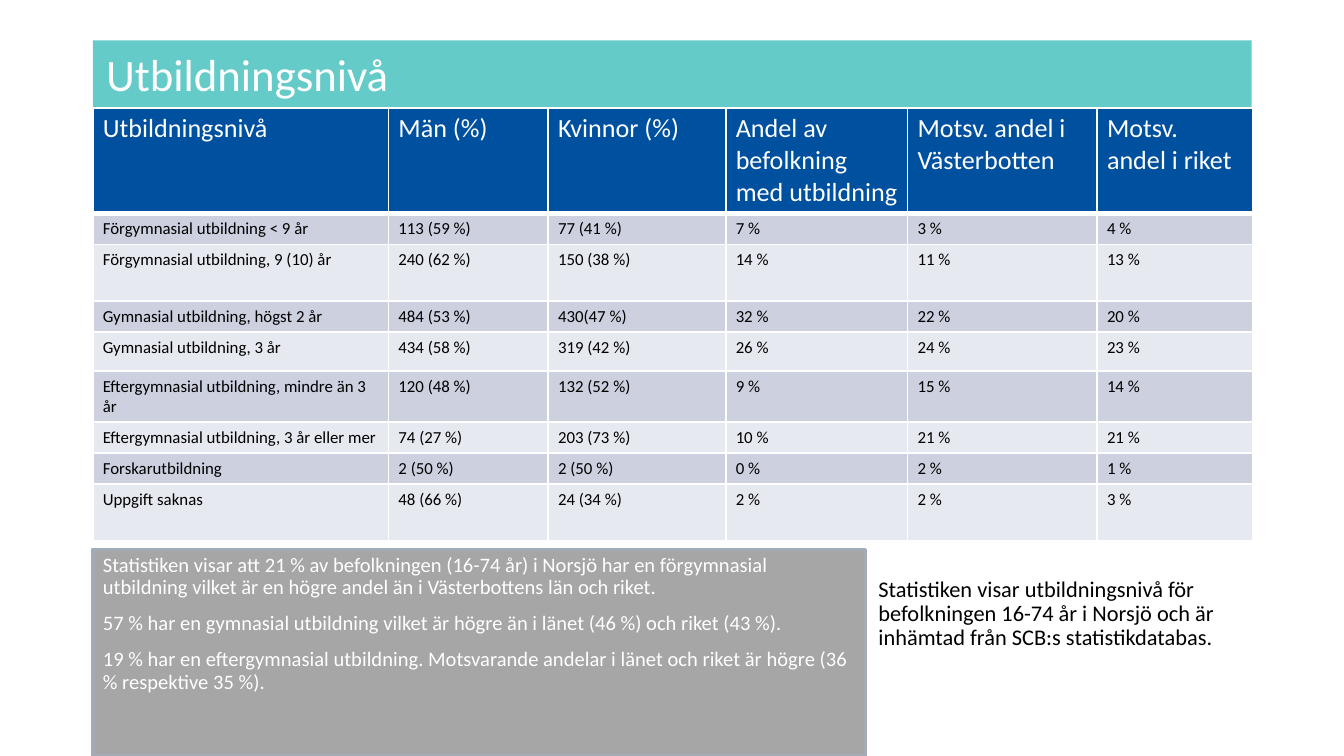
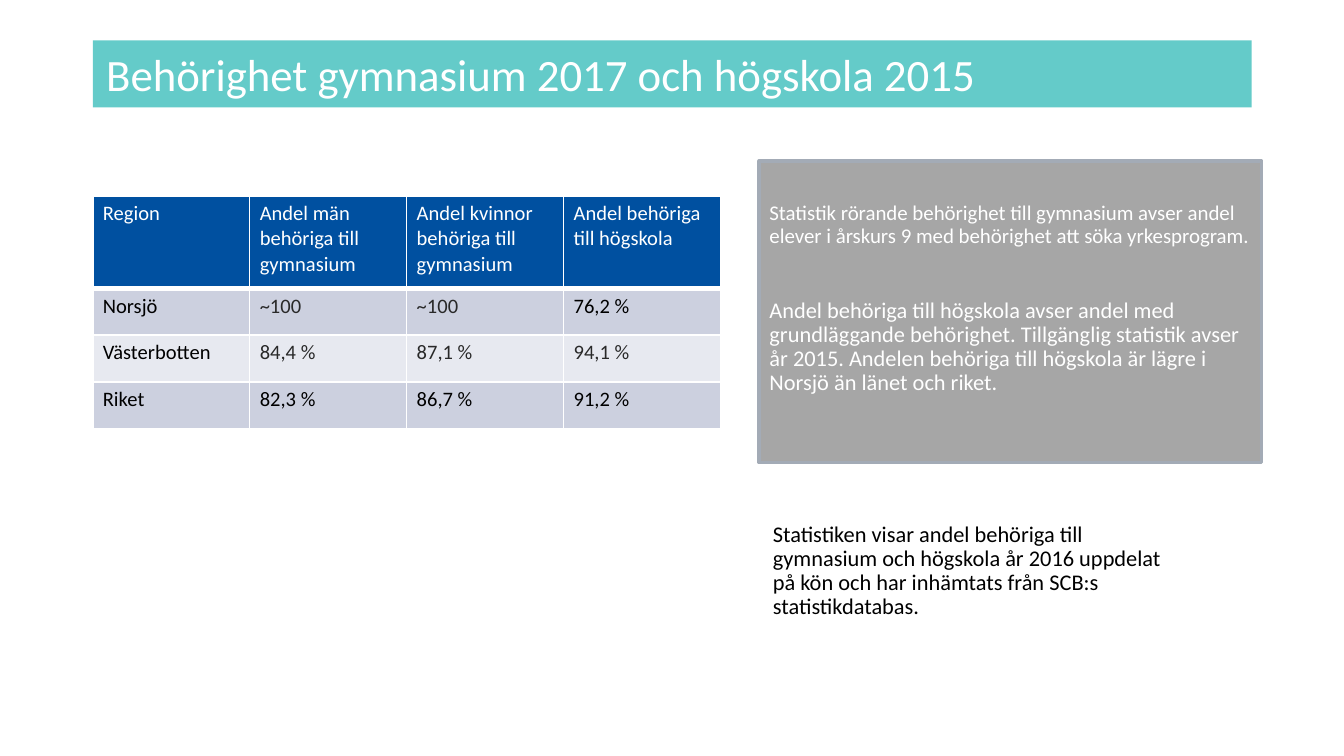
import pptx
import pptx.dml.color
import pptx.enum.shapes
import pptx.enum.text
import pptx.oxml
import pptx.oxml.ns
import pptx.util
from lxml import etree

Pt = pptx.util.Pt
RGBColor = pptx.dml.color.RGBColor
qn = pptx.oxml.ns.qn

TEAL = RGBColor(0x64, 0xCB, 0xC9)
BLUE = RGBColor(0x00, 0x50, 0xA0)
WHITE = RGBColor(0xFF, 0xFF, 0xFF)
BLACK = RGBColor(0x00, 0x00, 0x00)
SOFT_BLACK = RGBColor(0x29, 0x29, 0x29)
GREY = RGBColor(0xA6, 0xA6, 0xA6)
GREY_EDGE = RGBColor(0xA3, 0xAB, 0xB6)
BANDS = (RGBColor(0xCC, 0xD0, 0xDF), RGBColor(0xE7, 0xE9, 0xF0))

FONT = "Calibri"
LEFT = 49.7
SIDE_INSET = 5.4
TOP_INSET = 2.7

EDUCATION = [
    ["Utbildningsnivå", "Män (%)", "Kvinnor (%)", "Andel av befolkning med utbildning",
     "Motsv. andel i Västerbotten", "Motsv. andel i riket"],
    ["Förgymnasial utbildning < 9 år", "113 (59 %)", "77 (41 %)", "7 %", "3 %", "4 %"],
    ["Förgymnasial utbildning, 9 (10) år", "240 (62 %)", "150 (38 %)", "14 %", "11 %", "13 %"],
    ["Gymnasial utbildning, högst 2 år", "484 (53 %)", "430(47 %)", "32 %", "22 %", "20 %"],
    ["Gymnasial utbildning, 3 år", "434 (58 %)", "319 (42 %)", "26 %", "24 %", "23 %"],
    ["Eftergymnasial utbildning, mindre än 3 år", "120 (48 %)", "132 (52 %)", "9 %", "15 %", "14 %"],
    ["Eftergymnasial utbildning, 3 år eller mer", "74 (27 %)", "203 (73 %)", "10 %", "21 %", "21 %"],
    ["Forskarutbildning", "2 (50 %)", "2 (50 %)", "0 %", "2 %", "1 %"],
    ["Uppgift saknas", "48 (66 %)", "24 (34 %)", "2 %", "2 %", "3 %"],
]
EDUCATION_WIDTHS = [158.4, 85.5, 95.2, 97.4, 101.5, 83.5]
EDUCATION_HEIGHTS = [54, 16.6, 30.4, 16.6, 20.9, 27.2, 16.6, 16.6, 30.4]

ELIGIBILITY = [
    ["Region", "Andel män behöriga till gymnasium", "Andel kvinnor behöriga till gymnasium",
     "Andel behöriga till högskola"],
    ["Norsjö", "~100", "~100", "76,2 %"],
    ["Västerbotten", "84,4 %", "87,1 %", "94,1 %"],
    ["Riket", "82,3 %", "86,7 %", "91,2 %"],
]
SOFT_CELLS = {(1, 1), (1, 2), (2, 1), (2, 2), (2, 3)}


def place(shape, left, top, width, height):
    shape.left, shape.top = Pt(left), Pt(top)
    shape.width, shape.height = Pt(width), Pt(height)


def paint(shape, color):
    shape.fill.solid()
    shape.fill.fore_color.rgb = color


def add_span(para, text, size, color):
    span = para.add_run()
    span.text = text
    span.font.name = FONT
    span.font.size = Pt(size)
    span.font.bold = False
    span.font.color.rgb = color


def set_insets(target, side, top):
    target.margin_left = target.margin_right = Pt(side)
    target.margin_top = target.margin_bottom = Pt(top)


def prepare_frame(box, anchor):
    frame = box.text_frame
    frame.word_wrap = True
    frame.auto_size = pptx.enum.text.MSO_AUTO_SIZE.NONE
    frame.vertical_anchor = anchor
    return frame


def fill_title(page, text):
    title = page.shapes.title
    place(title, LEFT, 21.6, 620.8, 36)
    paint(title, TEAL)
    frame = prepare_frame(title, pptx.enum.text.MSO_ANCHOR.MIDDLE)
    para = frame.paragraphs[0]
    para.alignment = pptx.enum.text.PP_ALIGN.LEFT
    add_span(para, text, 24, WHITE)


def write_paragraphs(box, entries, color, gap=0):
    frame = prepare_frame(box, pptx.enum.text.MSO_ANCHOR.TOP)
    for index, (text, size) in enumerate(entries):
        para = frame.add_paragraph() if index else frame.paragraphs[0]
        properties = para._p.get_or_add_pPr()
        properties.set("marL", "0")
        properties.set("indent", "0")
        etree.SubElement(properties, qn("a:buNone"))
        para.alignment = pptx.enum.text.PP_ALIGN.LEFT
        para.line_spacing = 0.9
        para.space_before = Pt(gap if index else 0)
        add_span(para, text, size, color)


def fill_source(box, bounds, text):
    place(box, *bounds)
    write_paragraphs(box, [(text, 12)], BLACK)


def fill_comment(box, bounds, entries, gap, top_inset=TOP_INSET):
    place(box, *bounds)
    paint(box, GREY)
    box.line.color.rgb = GREY_EDGE
    box.line.width = Pt(2)
    set_insets(box.text_frame, SIDE_INSET, TOP_INSET)
    box.text_frame.margin_top = Pt(top_inset)
    write_paragraphs(box, entries, WHITE, gap)


def add_borders(cell, bottom_width):
    properties = cell._tc.get_or_add_tcPr()
    for side, width in (("L", 1), ("R", 1), ("T", 1), ("B", bottom_width)):
        line = etree.SubElement(properties, qn("a:ln" + side), w=str(int(Pt(width))))
        solid = etree.SubElement(line, qn("a:solidFill"))
        etree.SubElement(solid, qn("a:srgbClr"), val=str(WHITE))


def add_data_table(page, top, rows, widths, heights, header_size, body_size, soft_cells=()):
    table = page.shapes.add_table(
        len(rows), len(widths), Pt(LEFT), Pt(top), Pt(sum(widths)), Pt(sum(heights))
    ).table
    for column, width in zip(table.columns, widths):
        column.width = Pt(width)
    for row_index, texts in enumerate(rows):
        table.rows[row_index].height = Pt(heights[row_index])
        header = row_index == 0
        for column_index, text in enumerate(texts):
            cell = table.cell(row_index, column_index)
            set_insets(cell, SIDE_INSET, TOP_INSET)
            add_borders(cell, 3 if header else 1)
            paint(cell, BLUE if header else BANDS[(row_index - 1) % 2])
            soft = (row_index, column_index) in soft_cells
            color = WHITE if header else SOFT_BLACK if soft else BLACK
            add_span(cell.text_frame.paragraphs[0], text,
                     header_size if header else body_size, color)


def build_education(deck):
    page = deck.slides.add_slide(deck.slide_layouts[1])
    fill_title(page, "Utbildningsnivå")
    add_data_table(page, 57.9, EDUCATION, EDUCATION_WIDTHS, EDUCATION_HEIGHTS, 14, 9)
    comment = page.shapes.add_shape(
        pptx.enum.shapes.MSO_SHAPE.RECTANGLE, 0, 0, 0, 0)
    comment.shadow.inherit = False
    fill_comment(comment, (LEFT, 294.4, 414, 110.6), [
        ("Statistiken visar att 21 % av befolkningen (16-74 år) i Norsjö har en förgymnasial "
         "utbildning vilket är en högre andel än i Västerbottens län och riket.", 11),
        ("57 % har en gymnasial utbildning vilket är högre än i länet (46 %) och riket (43 %).", 11),
        ("19 % har en eftergymnasial utbildning. Motsvarande andelar i länet och riket är högre "
         "(36 % respektive 35 %).", 11),
    ], gap=7.5)
    fill_source(page.placeholders[1], (463.4, 306, 207.4, 77.8),
                "Statistiken visar utbildningsnivå för befolkningen 16-74 år i Norsjö och är "
                "inhämtad från SCB:s statistikdatabas.")


def build_eligibility(deck):
    page = deck.slides.add_slide(deck.slide_layouts[3])
    fill_title(page, "Behörighet gymnasium 2017 och högskola 2015")
    add_data_table(page, 104.9, ELIGIBILITY, [84.1] * 4, [49.7] + [25] * 3, 11, 11, SOFT_CELLS)
    fill_source(page.placeholders[1], (406.8, 276.5, 231.1, 69.1),
                "Statistiken visar andel behöriga till gymnasium och högskola år 2016 uppdelat "
                "på kön och har inhämtats från SCB:s statistikdatabas.")
    fill_comment(page.placeholders[2], (406.8, 86.2, 269, 161.6), [
        ("Statistik rörande behörighet till gymnasium avser andel elever i årskurs 9 med "
         "behörighet att söka yrkesprogram.", 11.2),
        ("Andel behöriga till högskola avser andel med grundläggande behörighet. Tillgänglig "
         "statistik avser år 2015. Andelen behöriga till högskola är lägre i Norsjö än länet "
         "och riket.", 12),
    ], gap=27.3, top_inset=22.5)


def main():
    deck = pptx.Presentation()
    deck.slide_width, deck.slide_height = Pt(720), Pt(405)
    build_education(deck)
    build_eligibility(deck)
    deck.save("out.pptx")


if __name__ == "__main__":
    main()
